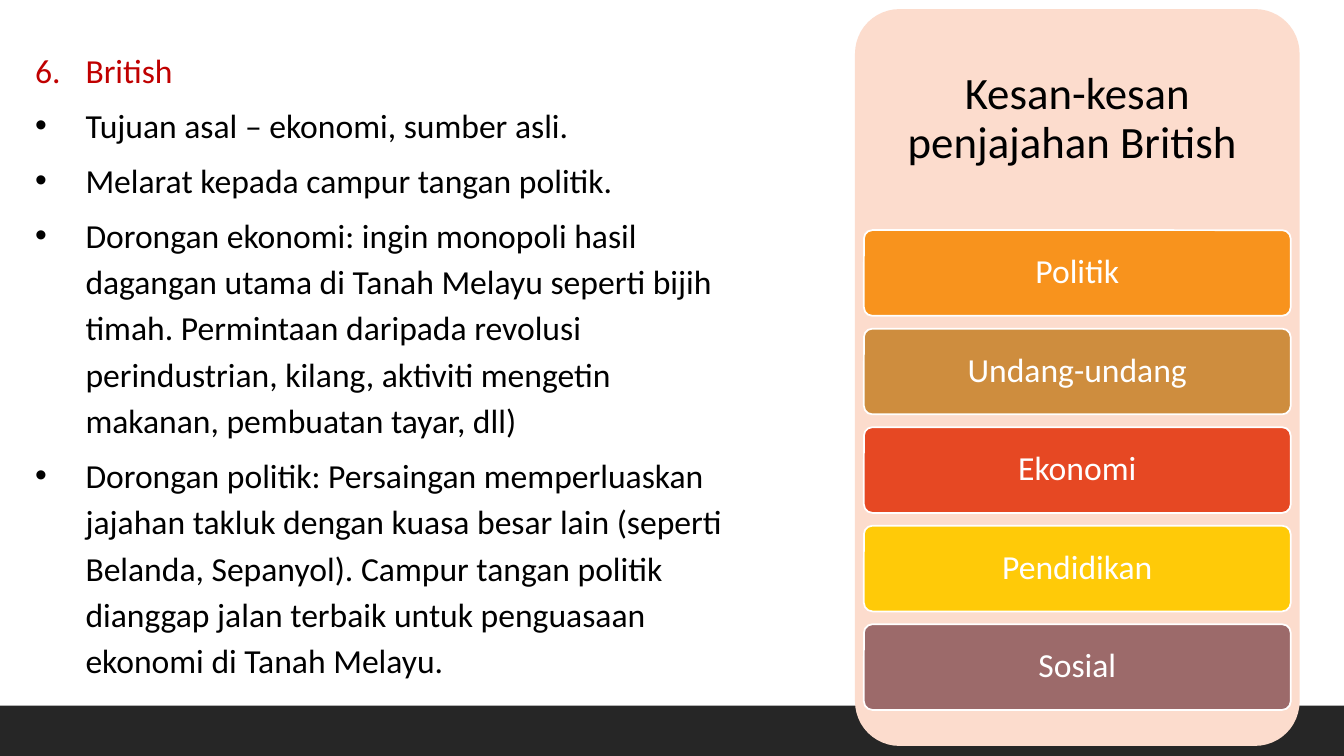
from lxml import etree
from pptx import Presentation
from pptx.dml.color import RGBColor
from pptx.enum.shapes import MSO_SHAPE
from pptx.enum.text import MSO_ANCHOR, PP_ALIGN
from pptx.oxml.ns import qn
from pptx.util import Inches, Pt

RECTANGLE = MSO_SHAPE.RECTANGLE
ROUNDED = MSO_SHAPE.ROUNDED_RECTANGLE
MIDDLE = MSO_ANCHOR.MIDDLE
CENTER = PP_ALIGN.CENTER

WHITE = RGBColor(0xFF, 0xFF, 0xFF)
BLACK = RGBColor(0x00, 0x00, 0x00)
CHARCOAL = RGBColor(0x26, 0x26, 0x26)
PEACH = RGBColor(0xFC, 0xDC, 0xCD)
RED = RGBColor(0xC0, 0x00, 0x00)
ORANGE = RGBColor(0xF8, 0x93, 0x1D)
OCHRE = RGBColor(0xCE, 0x8D, 0x3E)
VERMILION = RGBColor(0xE6, 0x48, 0x23)
YELLOW = RGBColor(0xFF, 0xCA, 0x08)
MAUVE = RGBColor(0x9C, 0x6A, 0x6A)

FONT = "Calibri"
WIDTH, HEIGHT = 13.33, 7.5

HEADING = "British"
POINTS = [
    "Tujuan asal – ekonomi, sumber asli.",
    "Melarat kepada campur tangan politik.",
    "Dorongan ekonomi: ingin monopoli hasil dagangan utama di Tanah Melayu "
    "seperti bijih timah. Permintaan daripada revolusi perindustrian, kilang, "
    "aktiviti mengetin makanan, pembuatan tayar, dll)",
    "Dorongan politik: Persaingan memperluaskan jajahan takluk dengan kuasa "
    "besar lain (seperti Belanda, Sepanyol). Campur tangan politik dianggap "
    "jalan terbaik untuk penguasaan ekonomi di Tanah Melayu.",
]
PANEL_TITLE = "Kesan-kesan penjajahan British "
EFFECTS = [
    ("Politik", ORANGE),
    ("Undang-undang", OCHRE),
    ("Ekonomi", VERMILION),
    ("Pendidikan", YELLOW),
    ("Sosial", MAUVE),
]


def add_block(slide, kind, box, fill, line=None):
    shape = slide.shapes.add_shape(kind, *map(Inches, box))
    shape.shadow.inherit = False
    shape.fill.solid()
    shape.fill.fore_color.rgb = fill
    if line is None:
        shape.line.fill.background()
    else:
        shape.line.color.rgb = line
        shape.line.width = Pt(1.25)
    if kind == ROUNDED:
        shape.adjustments[0] = 0.1
    return shape


def add_run(paragraph, text, size, color):
    run = paragraph.add_run()
    run.text = text
    run.font.name = FONT
    run.font.size = Pt(size)
    run.font.color.rgb = color


def write_centered(shape, text, size, color, side_inset, end_inset):
    frame = shape.text_frame
    frame.word_wrap = True
    frame.vertical_anchor = MIDDLE
    frame.margin_left = frame.margin_right = Inches(side_inset)
    frame.margin_top = frame.margin_bottom = Inches(end_inset)
    paragraph = frame.paragraphs[0]
    paragraph.alignment = CENTER
    paragraph.line_spacing = 0.9
    add_run(paragraph, text, size, color)


def set_marker(paragraph, tag, **attributes):
    properties = paragraph._p.get_or_add_pPr()
    properties.set("marL", str(Inches(0.5)))
    properties.set("indent", str(-Inches(0.5)))
    font = "Arial" if tag == "a:buChar" else "+mj-lt"
    etree.SubElement(properties, qn("a:buFont"), typeface=font)
    etree.SubElement(properties, qn(tag), **attributes)


def add_notes_column(slide, box):
    frame = slide.shapes.add_textbox(*map(Inches, box)).text_frame
    frame.word_wrap = True
    for index, text in enumerate([HEADING] + POINTS):
        paragraph = frame.add_paragraph() if index else frame.paragraphs[0]
        paragraph.line_spacing = 1.15
        paragraph.space_after = Pt(6)
        if index:
            set_marker(paragraph, "a:buChar", char="•")
        else:
            set_marker(paragraph, "a:buAutoNum", type="arabicPeriod", startAt="6")
        add_run(paragraph, text, 24, BLACK if index else RED)


def add_effects_panel(slide, box):
    left, top, width, height = box
    add_block(slide, ROUNDED, box, PEACH)
    title_height = 0.3 * height
    title = slide.shapes.add_textbox(*map(Inches, (left, top, width, title_height)))
    write_centered(title, PANEL_TITLE, 32, BLACK, 0.13, 0.13)

    margin = 0.02 * width
    bar_height = 0.85
    pitch = 1.15 * bar_height
    first_top = top + title_height
    for index, (label, color) in enumerate(EFFECTS):
        bar_box = (left + margin, first_top + index * pitch,
                   width - 2 * margin, bar_height)
        bar = add_block(slide, ROUNDED, bar_box, color, WHITE)
        write_centered(bar, label, 24, WHITE, 0.07, 0.05)


def main():
    presentation = Presentation()
    presentation.slide_width = Inches(WIDTH)
    presentation.slide_height = Inches(HEIGHT)
    slide = presentation.slides.add_slide(presentation.slide_layouts[6])
    add_block(slide, RECTANGLE, (0, 7, WIDTH, 0.5), CHARCOAL)
    add_effects_panel(slide, (8.48, 0.09, 4.41, 7.31))
    add_notes_column(slide, (0.25, 0.39, 7.26, 7))
    presentation.save("out.pptx")


if __name__ == "__main__":
    main()
